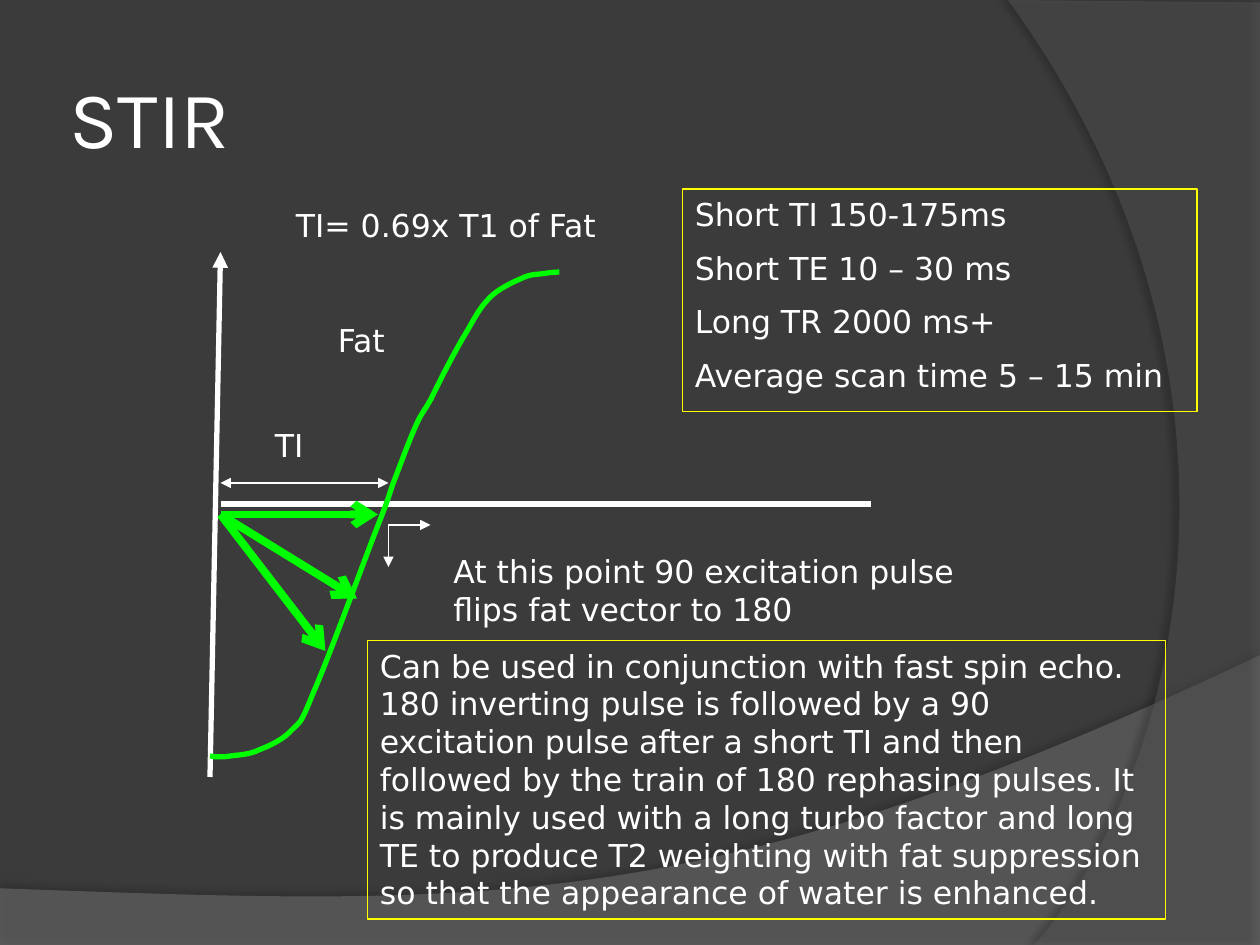
import pptx
import pptx.util
import pptx.dml.color
import pptx.enum.shapes
import pptx.enum.text
import pptx.oxml
import pptx.oxml.ns

Pt = pptx.util.Pt
qn = pptx.oxml.ns.qn
ALIGN = pptx.enum.text.PP_ALIGN
ANCHOR = pptx.enum.text.MSO_ANCHOR

COLOURS = {
    "background": "3B3B3B",
    "wave": "7F7F7F",
    "arc": "5E5E5E",
    "shadow": "000000",
    "text": "FFFFFF",
    "axis": "FFFFFF",
    "fat": "00FF00",
    "border": "FFFF00",
}

WAVE_CORNERS = [(0, 507.6), (0, 540.7), (720, 540.7)]
WAVE_CURVE = [(720, 374.4), (402.5, 524.9), (281.5, 517.7), (0, 507.6)]
ARC_CORNERS = [(720, 1.4), (720, 540)]
ARC_CURVE = [(591.1, 540), (673.2, 445.7), (733, 216), (576, 0)]
FAT_CURVE = [
    (120, 432), (122.4, 432.7), (127.4, 432.7), (131.8, 432),
    (136.8, 431.3), (142.6, 431.3), (148.3, 428.4),
    (154.1, 426.2), (162, 422.6), (167, 416.9),
    (172.1, 411.8), (171.4, 414.7), (179.3, 395.3),
    (187.9, 375.8), (208.1, 320.4), (216, 300.2),
    (223.9, 280.1), (221.8, 283.7), (225.4, 274.3),
    (229, 265), (234, 251.3), (237.6, 243.4),
    (241.2, 235.4), (241.2, 236.9), (246.2, 228.2),
    (250.6, 218.9), (260.6, 199.4), (266.4, 190.1),
    (272.2, 180), (274.3, 175.7), (280.1, 169.9),
    (285.1, 164.9), (293, 161.3), (298.1, 159.1),
    (303.8, 156.2), (308.2, 157), (311.8, 156.2),
    (315.4, 155.5), (318.2, 155.5), (319.7, 155.5),
]

SEQUENCE_TIMES = [
    "Short TI 150-175ms",
    "Short TE 10 – 30 ms",
    "Long TR 2000 ms+",
    "Average scan time 5 – 15 min",
]
USAGE = (
    "Can be used in conjunction with fast spin echo. 180 inverting pulse is "
    "followed by a 90 excitation pulse after a short TI and then followed by "
    "the train of 180 rephasing pulses. It is mainly used with a long turbo "
    "factor and long TE to produce T2 weighting with fat suppression so that "
    "the appearance of water is enhanced."
)


def colour(name):
    return pptx.dml.color.RGBColor.from_string(COLOURS[name])


def apply_format(target, values):
    for attribute, value in values.items():
        setattr(target, attribute, value)


def append_xml(parent, tag, **attributes):
    child = pptx.oxml.parse_xml(
        '<a:%s xmlns:a="http://schemas.openxmlformats.org/drawingml/2006/main"/>' % tag
    )
    for key, value in attributes.items():
        child.set(key, str(value))
    parent.append(child)
    return child


def set_line(line, name, width):
    line.fill.solid()
    line.fill.fore_color.rgb = colour(name)
    line.width = Pt(width)


def add_outline(slide, corners, curve, close):
    anchors = [(Pt(x), Pt(y)) for x, y in corners + curve[::3]]
    builder = slide.shapes.build_freeform(*anchors[0])
    builder.add_line_segments(anchors[1:], close=close)
    outline = builder.convert_to_shape()
    outline.shadow.inherit = False
    segments = list(outline._element.iter(qn("a:lnTo")))[-(len(curve) // 3):]
    for index, segment in enumerate(segments):
        bend = append_xml(segment.getparent(), "cubicBezTo")
        for x, y in curve[3 * index + 1:3 * index + 4]:
            append_xml(bend, "pt", x=Pt(x) - outline.left, y=Pt(y) - outline.top)
        segment.getparent().replace(segment, bend)
    return outline


def add_backdrop(slide, corners, curve, name, opacity, shadow_opacity, distance, angle):
    backdrop = add_outline(slide, corners, curve, True)
    backdrop.line.fill.background()
    backdrop.fill.solid()
    backdrop.fill.fore_color.rgb = colour(name)
    properties = backdrop._element.spPr
    fill_colour = properties.find(qn("a:solidFill")).find(qn("a:srgbClr"))
    append_xml(fill_colour, "alpha", val=opacity * 1000)
    shadow = append_xml(
        properties.find(qn("a:effectLst")), "outerShdw",
        blurRad=Pt(4), dist=Pt(distance), dir=angle * 60000,
    )
    shadow_colour = append_xml(shadow, "srgbClr", val=COLOURS["shadow"])
    append_xml(shadow_colour, "alpha", val=shadow_opacity * 1000)


def add_fat_curve(slide):
    recovery = add_outline(slide, [], FAT_CURVE, False)
    recovery.fill.background()
    set_line(recovery.line, "fat", 3)


def add_line(slide, start, end, name, width, head=None, tail=None):
    straight = pptx.enum.shapes.MSO_CONNECTOR.STRAIGHT
    connector = slide.shapes.add_connector(straight, *map(Pt, start + end))
    set_line(connector.line, name, width)
    for tag, arrow in (("headEnd", head), ("tailEnd", tail)):
        if arrow:
            append_xml(connector.line._get_or_add_ln(), tag, type=arrow)
    append_xml(connector._element.spPr, "effectLst")


def write_text(frame, paragraphs, size=18, font="DejaVu Sans", **frame_format):
    apply_format(frame, {"word_wrap": True, "vertical_anchor": ANCHOR.TOP, **frame_format})
    for index, wording in enumerate(paragraphs):
        paragraph = frame.add_paragraph() if index else frame.paragraphs[0]
        spacing = Pt(9) if index else Pt(0)
        apply_format(paragraph, {"alignment": ALIGN.LEFT, "space_before": spacing})
        run = paragraph.add_run()
        run.text = wording
        apply_format(run.font, {"size": Pt(size), "name": font})
        run.font.color.rgb = colour("text")


def add_title(slide, wording):
    title = slide.shapes.title
    apply_format(title, {"left": Pt(36), "top": Pt(21.6), "width": Pt(588), "height": Pt(90)})
    margins = {"margin_" + side: Pt(3.6) for side in ("left", "top", "right", "bottom")}
    write_text(title.text_frame, [wording], 46, "Karla",
               vertical_anchor=ANCHOR.MIDDLE, **margins)


def add_label(slide, wording, left, top, width, height=28.8):
    label = slide.shapes.add_textbox(Pt(left), Pt(top), Pt(width), Pt(height))
    write_text(label.text_frame, [wording])


def add_framed_text(slide, paragraphs, left, top, width, height):
    rectangle = pptx.enum.shapes.MSO_SHAPE.RECTANGLE
    panel = slide.shapes.add_shape(rectangle, Pt(left), Pt(top), Pt(width), Pt(height))
    panel.shadow.inherit = False
    panel.fill.background()
    set_line(panel.line, "border", 0.75)
    write_text(panel.text_frame, paragraphs)


def main():
    deck = pptx.Presentation()
    apply_format(deck, {"slide_width": Pt(720), "slide_height": Pt(540)})
    slide = deck.slides.add_slide(deck.slide_layouts[5])
    slide.background.fill.solid()
    slide.background.fill.fore_color.rgb = colour("background")

    add_backdrop(slide, WAVE_CORNERS, WAVE_CURVE, "wave", 45, 35, 3.5, 270)
    add_backdrop(slide, ARC_CORNERS, ARC_CURVE, "arc", 40, 45, 4, 180)
    add_title(slide, "STIR")

    add_line(slide, (126, 144), (120, 444), "axis", 3, head="triangle")
    add_line(slide, (126, 288), (498, 288), "axis", 3)
    add_fat_curve(slide)
    add_line(slide, (126, 276), (222, 276), "axis", 0.75, "triangle", "triangle")
    add_label(slide, "TI", 150, 240, 36)
    add_label(slide, "Fat", 186, 180, 54)
    for end in ((246, 300), (222, 324)):
        add_line(slide, (222, 300), end, "axis", 0.75, tail="triangle")
    add_label(slide, "At this point 90 excitation pulse flips fat vector to 180",
              252, 312, 336, 51)

    add_framed_text(slide, SEQUENCE_TIMES, 390, 108, 294, 127.2)
    add_framed_text(slide, [USAGE], 210, 366, 456, 159.2)
    for tip in ((216, 294), (204, 342), (186, 372)):
        add_line(slide, (126, 294), tip, "fat", 4.5, tail="arrow")
    add_label(slide, "TI= 0.69x T1 of Fat", 162, 114, 204)

    deck.save("out.pptx")


if __name__ == "__main__":
    main()
